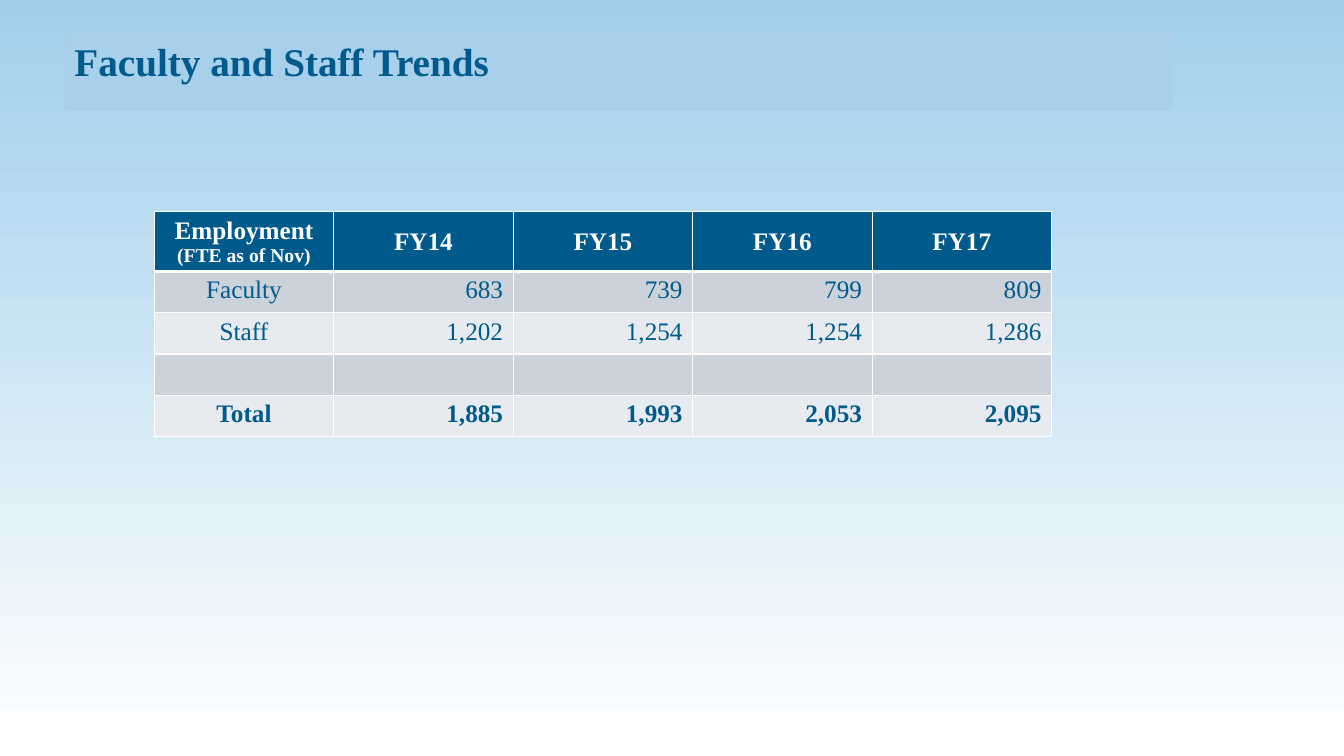
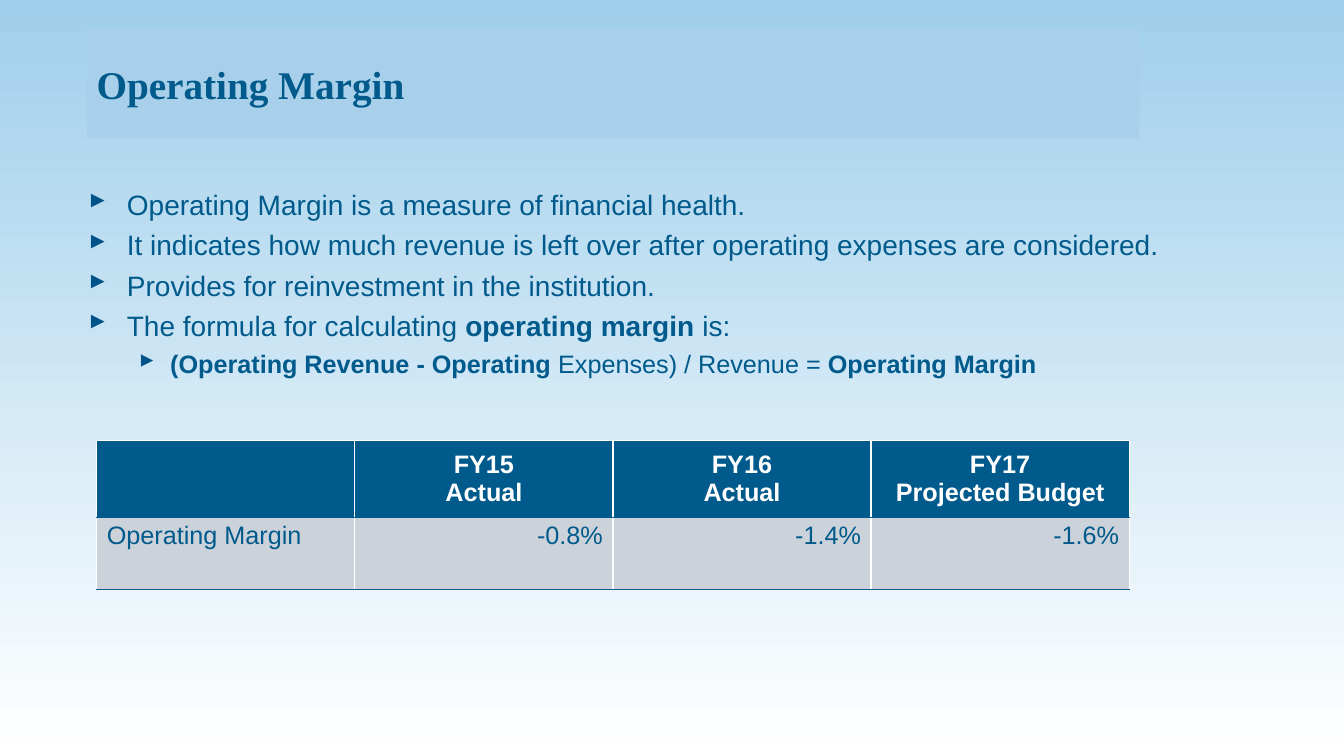
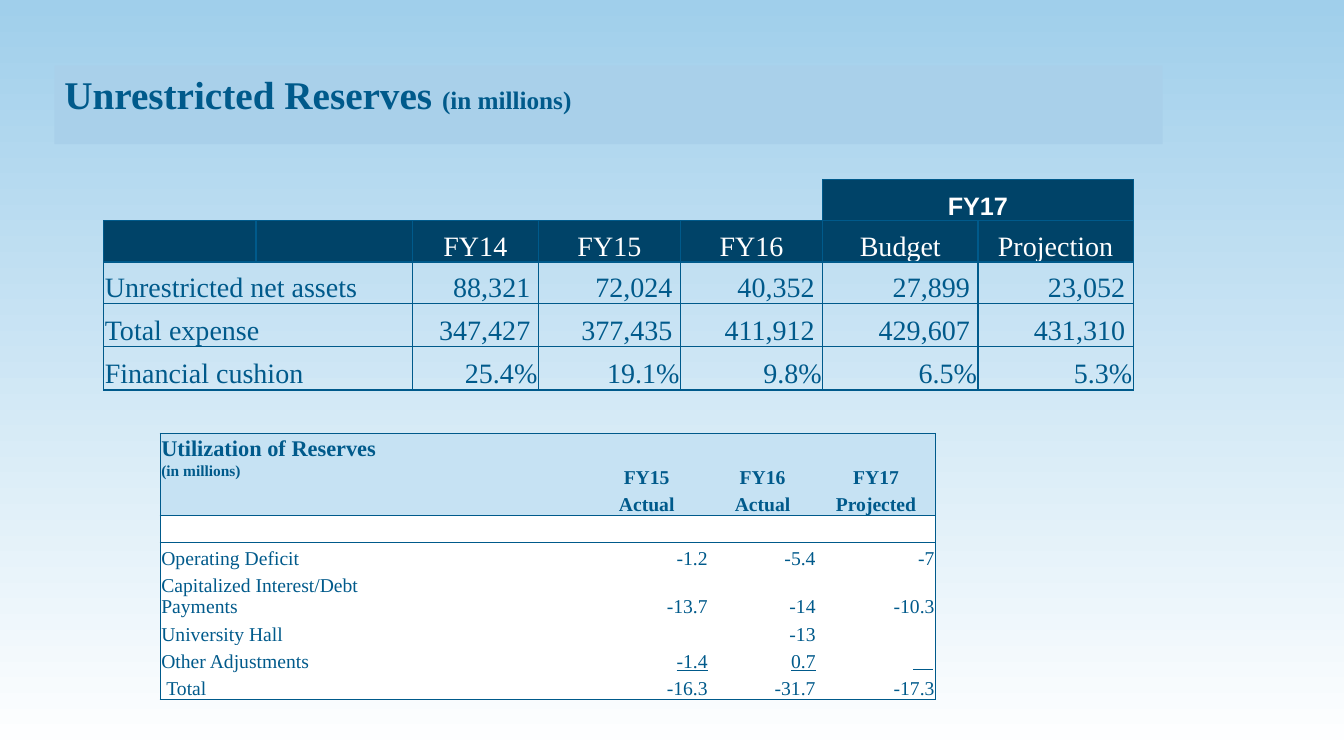
"""Build three slides on staffing, operating margin and unrestricted reserves."""
from lxml import etree
from pptx import Presentation
from pptx import util as u
from pptx.dml.color import RGBColor
from pptx.enum import shapes, text
from pptx.oxml.ns import qn

BLUE = RGBColor(0x00, 0x5A, 0x8B)
NAVY = RGBColor(0x00, 0x43, 0x68)
SKY = RGBColor(0xA0, 0xCF, 0xEB)
BAND = RGBColor(0xA9, 0xD0, 0xEA)
PALE = RGBColor(0xC6, 0xE2, 0xF3)
GRAY = RGBColor(0xCC, 0xD2, 0xDA)
LIGHT = RGBColor(0xE7, 0xEA, 0xEE)
WHITE = RGBColor(0xFF, 0xFF, 0xFF)
BULLET = RGBColor(0x00, 0x53, 0x89)

SERIF, SANS = "Times New Roman", "Arial"
LEFT, CENTER, RIGHT = text.PP_ALIGN.LEFT, text.PP_ALIGN.CENTER, text.PP_ALIGN.RIGHT
TOP, MIDDLE, BOTTOM = text.MSO_ANCHOR.TOP, text.MSO_ANCHOR.MIDDLE, text.MSO_ANCHOR.BOTTOM
PLAIN_TABLE = "{2D5ABB26-0587-4C30-8999-92F81FD0307C}"
NORMAL_INSETS = (0.1, 0.05, 0.1, 0.05)
TIGHT_INSETS = (0.01, 0.01, 0.01, 0)

STAFF_ROWS = [
    [[["Employment ", ("(FTE as of Nov)", {"size": 14})]], "FY14", "FY15", "FY16", "FY17"],
    ["Faculty", "683", "739", "799", "809"],
    ["Staff", "1,202", "1,254", "1,254", "1,286"],
    ["", "", "", "", ""],
    ["Total", "1,885", "1,993", "2,053", "2,095"],
]
MARGIN_POINTS = [
    (0, ["Operating Margin is a measure of financial health."]),
    (0, ["It indicates how much revenue is left over after operating expenses are considered."]),
    (0, ["Provides for reinvestment in the institution."]),
    (0, ["The formula for calculating ", ("operating margin", {"bold": True}), " is:"]),
    (1, [("(Operating Revenue - Operating", {"bold": True}), " Expenses) / Revenue = ",
         ("Operating Margin", {"bold": True})]),
]
BULLET_LEVELS = [
    {"size": 20, "margin": 0.38, "hanging": 0.38},
    {"size": 18, "margin": 0.81, "hanging": 0.31},
]
MARGIN_ROWS = [
    ["", ["FY15", "Actual"], ["FY16", "Actual"], ["FY17", "Projected Budget"]],
    ["Operating Margin", "-0.8%", "-1.4%", "-1.6%"],
]
RESERVE_ROWS = [
    ["", "", "", "", "", "FY17", ""],
    ["", "", "FY14", "FY15", "FY16", "Budget", "Projection"],
    ["Unrestricted net assets", "", "88,321", "72,024", "40,352", "27,899", "23,052"],
    ["Total expense", "", "347,427", "377,435", "411,912", "429,607", "431,310"],
    ["Financial cushion", "", "25.4%", "19.1%", "9.8%", "6.5%", "5.3%"],
]
RESERVE_MERGES = [(0, 0, 1), (0, 5, 6), (2, 0, 1), (3, 0, 1), (4, 0, 1)]
USE_ROWS = [
    ["Utilization of Reserves", "", "", "", "", "", ""],
    ["(in millions)", "", "", "", "FY15", "FY16", "FY17"],
    ["", "", "", "", "Actual", "Actual", "Projected"],
    ["", "", "", "", "", "", ""],
    ["Operating Deficit", "", "", "", "-1.2", "-5.4", "-7"],
    ["Capitalized Interest/Debt Payments", "", "", "", "-13.7", "-14", "-10.3"],
    ["University Hall", "", "", "", "", "-13", ""],
    ["Other Adjustments", "", "", "", "-1.4", "0.7", ""],
    ["Total", "", "", "", "-16.3", "-31.7", "-17.3"],
]
USE_MERGES = ([(0, 0, 3)] + [(row, 1, 2) for row in (1, 2, 3)]
              + [(row, 0, 2) for row in (4, 5, 6, 7)] + [(8, 0, 1)])


def inches(values):
    return [u.Inches(value) for value in values]


def set_all(target, values):
    for name, value in values.items():
        setattr(target, name, value)


def set_font(font, style):
    for name, value in style.items():
        if name == "color":
            font.color.rgb = value
        else:
            setattr(font, name, u.Pt(value) if name == "size" else value)


def write(para, spans, style):
    for item in spans:
        words, extra = item if isinstance(item, tuple) else (item, {})
        span = para.add_run()
        span.text = words
        set_font(span.font, {**style, **extra})


def add_title(page, at, spans, anchor=TOP):
    band = page.shapes.add_shape(shapes.MSO_SHAPE.RECTANGLE, *inches(at))
    band.shadow.inherit = False
    band.fill.solid()
    band.fill.fore_color.rgb = BAND
    band.line.fill.background()
    set_all(band.text_frame, {"word_wrap": True, "vertical_anchor": anchor})
    para = band.text_frame.paragraphs[0]
    para.alignment = LEFT
    write(para, spans, {"size": 28, "name": SERIF, "bold": True, "color": BLUE})


def add_bullets(page, at, points):
    box = page.shapes.add_textbox(*inches(at))
    box.text_frame.word_wrap = True
    for index, (depth, spans) in enumerate(points):
        level = BULLET_LEVELS[depth]
        para = box.text_frame.paragraphs[0] if index == 0 else box.text_frame.add_paragraph()
        para.level = depth
        props = para._p.get_or_add_pPr()
        props.set("marL", str(u.Inches(level["margin"])))
        props.set("indent", str(-u.Inches(level["hanging"])))
        tint = etree.SubElement(props, qn("a:buClr"))
        etree.SubElement(tint, qn("a:srgbClr")).set("val", str(BULLET))
        etree.SubElement(props, qn("a:buChar")).set("char", "▸")
        if index:
            para.space_before = u.Pt(4.8)
        write(para, spans, {"size": level["size"], "name": SANS, "color": BLUE})


def draw_borders(cell, borders):
    props = cell._tc.get_or_add_tcPr()
    for side in "LRTB":
        if side in borders:
            color, width = borders[side]
            edge = etree.SubElement(props, qn("a:ln" + side))
            edge.set("w", str(u.Pt(width)))
            fill = etree.SubElement(edge, qn("a:solidFill"))
            etree.SubElement(fill, qn("a:srgbClr")).set("val", str(color))


def fill_cell(cell, content, font, borders, fill=None, align=LEFT, anchor=TOP,
              insets=NORMAL_INSETS):
    draw_borders(cell, borders)
    if fill is None:
        cell.fill.background()
    else:
        cell.fill.solid()
        cell.fill.fore_color.rgb = fill
    sides = ("margin_left", "margin_top", "margin_right", "margin_bottom")
    set_all(cell, {**dict(zip(sides, inches(insets))), "vertical_anchor": anchor})
    lines = content if isinstance(content, list) else [content]
    for index, line in enumerate(lines):
        para = cell.text_frame.paragraphs[0] if index == 0 else cell.text_frame.add_paragraph()
        para.alignment = align
        if line:
            write(para, line if isinstance(line, list) else [line], font)
        else:
            ending = etree.SubElement(para._p, qn("a:endParaRPr"))
            ending.set("sz", str(font["size"] * 100))


def add_grid(page, corner, widths, heights, rows, style_cell, merges=()):
    size = (sum(widths), sum(heights))
    frame = page.shapes.add_table(len(rows), len(widths), *inches((*corner, *size)))
    table = frame.table
    set_all(table, {"first_row": False, "horz_banding": False})
    table._tbl.tblPr.find(qn("a:tableStyleId")).text = PLAIN_TABLE
    for column, width in zip(table.columns, widths):
        column.width = u.Inches(width)
    for line, height in zip(table.rows, heights):
        line.height = u.Inches(height)
    for row, first, last in merges:
        table.cell(row, first).merge(table.cell(row, last))
    for row, contents in enumerate(rows):
        for col, content in enumerate(contents):
            fill_cell(table.cell(row, col), content, **style_cell(row, col))


def staff_cell(row, col):
    head = row == 0
    borders = dict.fromkeys("LRTB", (WHITE, 1))
    if head:
        borders["B"] = (WHITE, 3)
    return {
        "font": {"size": 18, "name": SERIF, "bold": row in (0, 4),
                 "color": WHITE if head else BLUE},
        "borders": borders,
        "fill": BLUE if head else (LIGHT, GRAY)[row % 2],
        "align": CENTER if head or col == 0 else RIGHT,
        "anchor": MIDDLE if head and col else TOP,
    }


def margin_cell(row, col):
    head = row == 0
    return {
        "font": {"size": 18, "name": SANS, "bold": head, "color": WHITE if head else BLUE},
        "borders": {"L": (WHITE, 1), "R": (WHITE, 1),
                    "T": (WHITE if head else BLUE, 1), "B": (BLUE, 1)},
        "fill": BLUE if head else GRAY,
        "align": CENTER if head else RIGHT if col else LEFT,
        "anchor": MIDDLE if head else TOP,
    }


def reserve_cell(row, col):
    head, top = row < 2, row == 0
    sides = "LRTB"
    if top and col < 5:
        sides = "RB" if col == 4 else "B"
    amount = row in (2, 3) and col > 1
    return {
        "font": {"size": 18 if top else 20, "name": SANS if top else SERIF, "bold": top,
                 "color": WHITE if head else BLUE},
        "borders": dict.fromkeys(sides, (BLUE, 1)),
        "fill": NAVY if head and (row or col > 4) else None,
        "align": CENTER if head else RIGHT if col > 1 else LEFT,
        "anchor": BOTTOM,
        "insets": (0.01, 0.01, 0.08, 0) if amount else TIGHT_INSETS,
    }


def use_cell(row, col):
    head, last = row < 3, len(USE_ROWS) - 1
    edges = {"L": col == 0, "R": col == 6, "T": row in (0, 3), "B": row in (2, last)}
    size = {(0, 0): 16, (1, 0): 11}.get((row, col), 14)
    return {
        "font": {"size": size, "name": SERIF, "bold": head, "color": BLUE,
                 "underline": row == 7 and col > 3},
        "borders": {side: (BLUE, 1) for side, shown in edges.items() if shown},
        "fill": PALE if head else WHITE,
        "align": LEFT if col < 4 else CENTER if head else RIGHT,
        "anchor": TOP if (row, col) == (1, 0) else BOTTOM,
        "insets": (0.06, 0.01, 0.01, 0) if (row, col) == (last, 0) else TIGHT_INSETS,
    }


def add_rule(page, start, end):
    rule = page.shapes.add_connector(shapes.MSO_CONNECTOR.STRAIGHT, *inches((*start, *end)))
    rule.line.color.rgb = BLUE
    rule.line.width = u.Pt(0.75)
    etree.SubElement(rule._element.spPr, qn("a:effectLst"))


def set_background(master):
    fill = master.background.fill
    fill.gradient()
    fill.gradient_angle = 270
    for stop, color in zip(fill.gradient_stops, (SKY, WHITE)):
        stop.color.rgb = color


def main():
    deck = Presentation()
    set_all(deck, {"slide_width": u.Inches(13.33), "slide_height": u.Inches(7.5)})
    set_background(deck.slide_masters[0])
    staff, margin, reserves = [deck.slides.add_slide(deck.slide_layouts[6]) for _ in range(3)]

    add_title(staff, (0.64, 0.32, 10.99, 0.78), ["Faculty and Staff Trends"])
    add_grid(staff, (1.53, 2.1), [1.78] * 5, [0.59] + [0.41] * 4, STAFF_ROWS, staff_cell)

    add_bullets(margin, (0.78, 1.81, 11.61, 4.5), MARGIN_POINTS)
    add_grid(margin, (0.96, 4.37), [2.56] * 4, [0.76, 0.72], MARGIN_ROWS, margin_cell)
    add_title(margin, (0.86, 0.29, 10.44, 1.08), ["Operating Margin"], MIDDLE)

    add_title(reserves, (0.54, 0.65, 10.99, 0.78),
              ["Unrestricted Reserves ", ("(in millions)", {"size": 18})])
    add_grid(reserves, (1.03, 1.78), [1.51, 1.55, 1.25, 1.41, 1.41, 1.54, 1.54],
             [0.41] * 3 + [0.43] * 2, RESERVE_ROWS, reserve_cell, RESERVE_MERGES)
    add_grid(reserves, (1.59, 4.3), [1.14, 0.27, 0.74, 2.06, 1.23, 1.07, 1.18],
             [0.27] * 9, USE_ROWS, use_cell, USE_MERGES)
    add_rule(reserves, (9.06, 6.64), (9.25, 6.64))

    deck.save("out.pptx")


if __name__ == "__main__":
    main()
